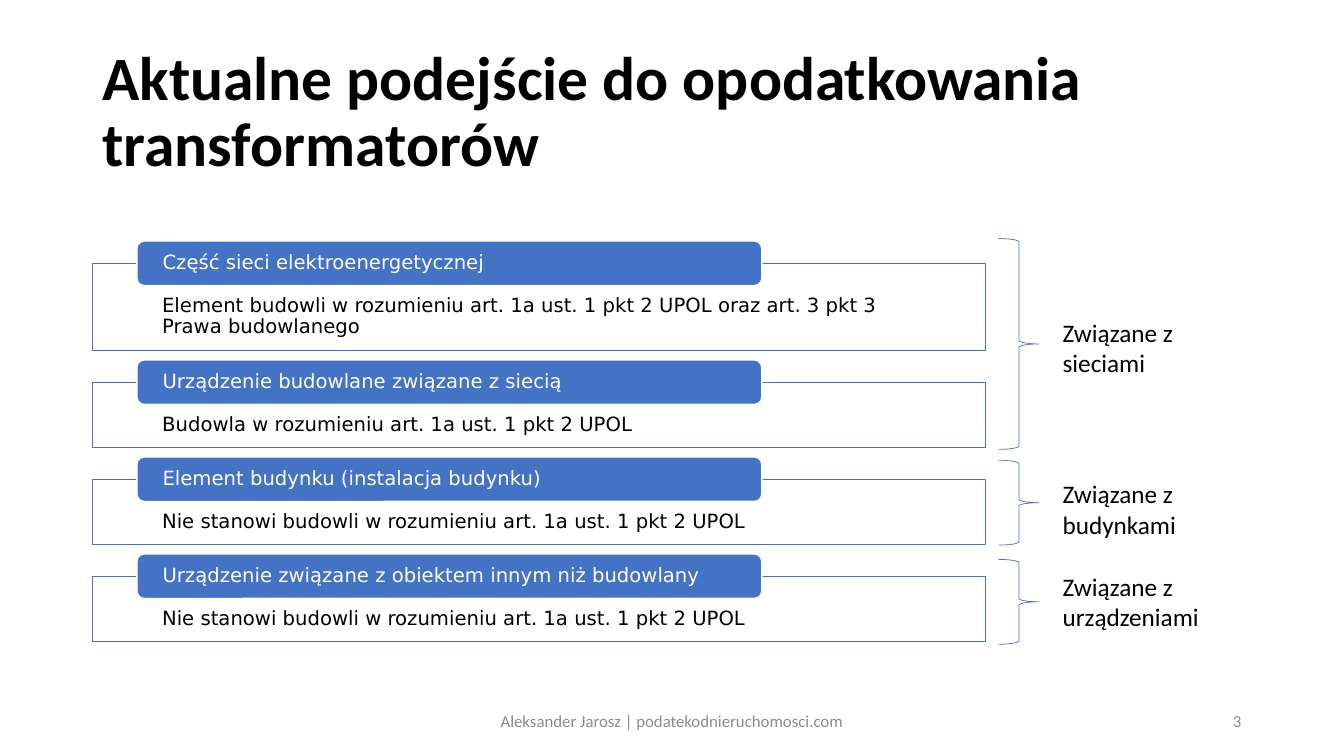
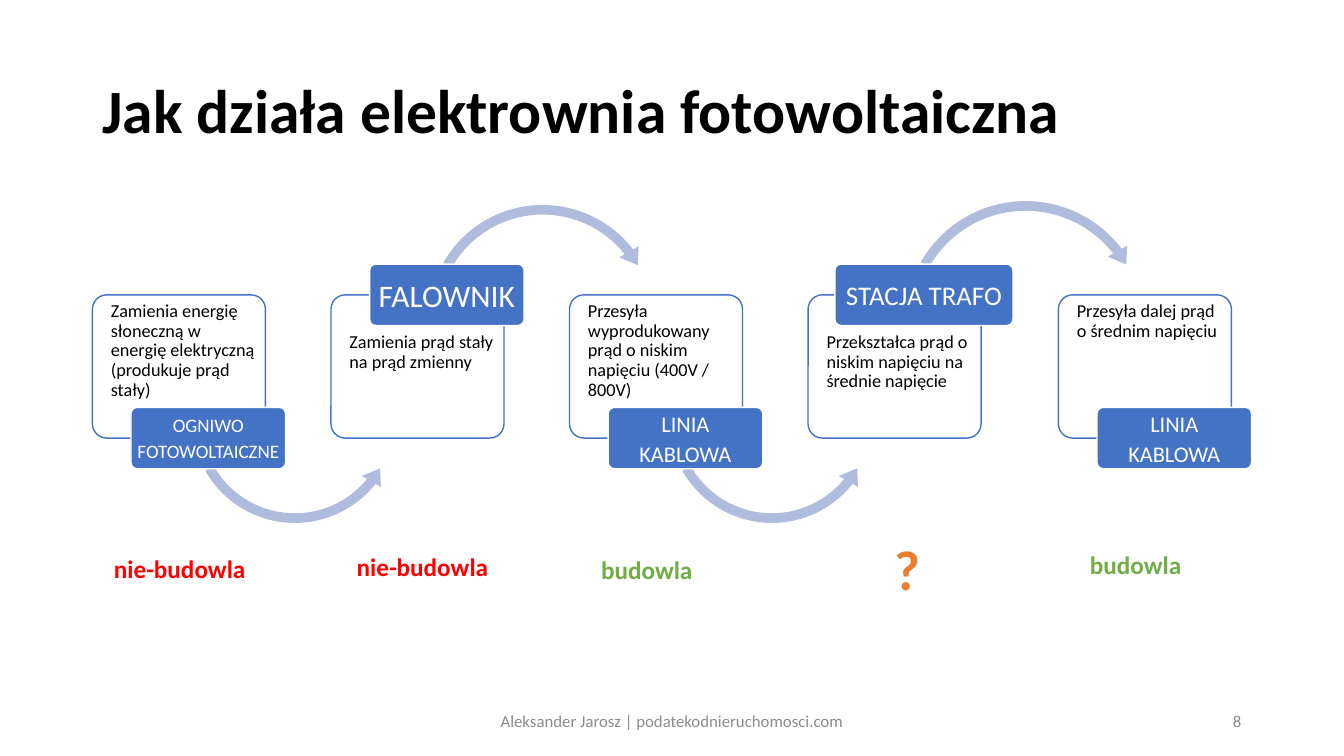
from lxml import etree
from pptx import Presentation
from pptx.dml.color import RGBColor
from pptx.enum.shapes import MSO_SHAPE as Preset
from pptx.enum.text import MSO_ANCHOR as Anchor, PP_ALIGN as Align
from pptx.oxml.ns import qn
from pptx.util import Inches, Pt

COLOURS = {
    "ink": "000000",
    "paper": "FFFFFF",
    "blue": "4472C4",
    "arrow": "B0BCDE",
    "footer": "8C8C8C",
    "red": "FF0000",
    "green": "70AD47",
    "orange": "ED7D31",
}
COLUMNS, ROWS = 160, 90
WIDTH, HEIGHT = Inches(13.33), Inches(7.5)
MARGIN, CONTENT = 11, 138
FOOTER = "Aleksander Jarosz | podatekodnieruchomosci.com"


class Deck:
    """Holds the style and the current slide; lengths are grid columns and rows."""

    def __init__(self):
        self.show = Presentation()
        self.show.slide_width, self.show.slide_height = WIDTH, HEIGHT
        self.slide = None

    def col(self, count):
        return round(WIDTH * count / COLUMNS)

    def row(self, count):
        return round(HEIGHT * count / ROWS)

    def area(self, x, y, w, h):
        return self.col(x), self.row(y), self.col(w), self.row(h)

    def colour(self, name):
        return RGBColor.from_string(COLOURS[name])

    def new_slide(self, title, number):
        self.slide = self.show.slides.add_slide(self.show.slide_layouts[6])
        self.text((MARGIN, 4.8, CONTENT, 17.4), title, 44, bold=True,
                  anchor=Anchor.MIDDLE, spacing=0.9)
        for area, words, align in (
            ((53, 83.4, 54, 4.8), FOOTER, Align.CENTER),
            ((113, 83.4, 36, 4.8), str(number), Align.RIGHT),
        ):
            self.text(area, words, 12, "footer", align=align, anchor=Anchor.MIDDLE)

    def set_text(self, holder, words, size, colour="ink", font="Calibri", bold=False,
                 align=Align.LEFT, anchor=Anchor.TOP, spacing=1.0,
                 insets=(1.2, 0.6, 1.2, 0.6), small_caps=False):
        """Fill a shape with text; insets are left, top, right, bottom."""
        frame = holder.text_frame
        frame.word_wrap = True
        frame.vertical_anchor = anchor
        left, top, right, bottom = insets
        frame.margin_left, frame.margin_right = self.col(left), self.col(right)
        frame.margin_top, frame.margin_bottom = self.row(top), self.row(bottom)
        for index, line in enumerate(words.split("\n")):
            paragraph = frame.add_paragraph() if index else frame.paragraphs[0]
            paragraph.alignment = align
            paragraph.line_spacing = spacing
            run = paragraph.add_run()
            run.text = line
            run.font.size = Pt(size)
            run.font.name = font
            run.font.bold = bold
            run.font.color.rgb = self.colour(colour)
            if small_caps:
                run._r.get_or_add_rPr().set("cap", "small")

    def text(self, area, words, size, colour="ink", **style):
        box = self.slide.shapes.add_textbox(*self.area(*area))
        self.set_text(box, words, size, colour, **style)

    def shape(self, preset, area, fill=None, line=None, weight=1, adjust=(), opacity=None):
        shape = self.slide.shapes.add_shape(preset, *self.area(*area))
        shape.shadow.inherit = False
        for index, value in enumerate(adjust):
            shape.adjustments[index] = value
        if fill:
            shape.fill.solid()
            shape.fill.fore_color.rgb = self.colour(fill)
        else:
            shape.fill.background()
        if opacity:
            tint = shape.element.spPr.find(qn("a:solidFill"))[0]
            etree.SubElement(tint, qn("a:alpha")).set("val", str(opacity * 1000))
        if line:
            shape.line.color.rgb = self.colour(line)
            shape.line.width = Pt(weight)
        else:
            shape.line.fill.background()
        return shape

    def panel(self, preset, area, adjust=()):
        return self.shape(preset, area, "paper", "blue", adjust=adjust, opacity=90)

    def label(self, area, words, size, adjust=(), **style):
        tab = self.shape(Preset.ROUNDED_RECTANGLE, area, "blue", "paper", adjust=adjust)
        self.set_text(tab, words, size, "paper", anchor=Anchor.MIDDLE, spacing=0.9, **style)

    def brace(self, top, height):
        self.shape(Preset.RIGHT_BRACE, (118.9, top, 4.8, height), line="blue", weight=0.5)

    def arc_arrow(self, centre_x, centre_y, size, over):
        """Draw an arc from left to right, over or under its centre."""
        tip, start, full_turn = 17.75, 90.25, 216  # 0.6 per degree
        head = 144 / size
        if over:
            preset = Preset.CIRCULAR_ARROW
            angles = (head, full_turn - tip - head, full_turn - start)
        else:
            preset = Preset.LEFT_CIRCULAR_ARROW
            angles = (head, tip + head, start)
        area = (centre_x - size / 2, centre_y - size / 2, size, size)
        self.shape(preset, area, "arrow", adjust=(1.15 / size, *angles, 1.32 / size))


def transformer_slide(deck):
    deck.new_slide("Aktualne podejście do opodatkowania transformatorów", 3)
    no_structure = "Nie stanowi budowli w rozumieniu art. 1a ust. 1 pkt 2 UPOL"
    approaches = (
        ("Część sieci elektroenergetycznej",
         "Element budowli w rozumieniu art. 1a ust. 1 pkt 2 UPOL oraz art. 3 pkt 3 "
         "Prawa budowlanego", 10.4),
        ("Urządzenie budowlane związane z siecią",
         "Budowla w rozumieniu art. 1a ust. 1 pkt 2 UPOL", 7.8),
        ("Element budynku (instalacja budynku)", no_structure, 7.8),
        ("Urządzenie związane z obiektem innym niż budowlany", no_structure, 7.8),
    )
    tab_height, gap, top = 5.3, 1.1, 28.7
    for heading, ruling, height in approaches:
        panel_top = top + tab_height / 2
        panel = deck.panel(Preset.RECTANGLE, (MARGIN, panel_top, 106.3, height))
        deck.set_text(panel, ruling, 14, font="DejaVu Sans", spacing=0.9,
                      insets=(8.3, 3.8, 8.3, 1.3))
        deck.label((16.3, top, 74.4, tab_height), heading, 14, font="DejaVu Sans",
                   insets=(2.8, 0, 2.8, 0))
        top = panel_top + height + gap

    for group, note_top, brace_top, brace_height in (
        ("Związane z sieciami", 37.2, 28.4, 25.1),
        ("Związane z budynkami", 56.4, 54.8, 10.1),
        ("Związane z urządzeniami", 67.4, 66.6, 10.1),
    ):
        deck.text((125.3, note_top, 25.4, 8.5), group, 18)
        deck.brace(brace_top, brace_height)


def power_plant_slide(deck):
    deck.new_slide("Jak działa elektrownia fotowoltaiczna", 8)
    # device, its size and width, role, arrow (offset, centre, size),
    # verdict, its colour, size, offset and centre
    steps = (
        ("ogniwo\nfotowoltaiczne", 17, 18.4,
         "Zamienia energię słoneczną w energię elektryczną (produkuje prąd stały)",
         (24.1, 50, 26), ("nie-budowla", "red", 18, 10.4, 67.7)),
        ("falownik", 28, 18.4, "Zamienia prąd stały na prąd zmienny",
         (25.2, 38, 28.7), ("nie-budowla", "red", 18, 10.9, 67.4)),
        ("linia kablowa", 20, 18.4,
         "Przesyła wyprodukowany prąd o niskim napięciu (400V / 800V)",
         (24.1, 50, 26), ("budowla", "green", 18, 9.2, 67.8)),
        ("stacja trafo", 24, 21.2,
         "Przekształca prąd o niskim napięciu na średnie napięcie",
         (25.9, 38.3, 30.2), ("?", "orange", 40, 11.8, 67.6)),
        ("linia kablowa", 20, 18.4, "Przesyła dalej prąd o średnim napięciu",
         None, ("budowla", "green", 18, 9.2, 67.2)),
    )
    panel_top, panel_height, label_height = 35.1, 17.05, 7.3
    label_centre, gap, corner = 13.8, 5.4, (0.1,)
    verdict_width, verdict_height = 18.4, 9.2
    left = MARGIN
    for index, (device, size, width, role, arrow, verdict) in enumerate(steps):
        label_on_top = index % 2 == 1
        panel = deck.panel(Preset.ROUNDED_RECTANGLE,
                           (left, panel_top, 20.6, panel_height), corner)
        deck.set_text(panel, role, 13, spacing=0.9,
                      insets=(1.7, 4 if label_on_top else 0.3, 0.2, 0.3))
        if arrow:
            offset, centre, arrow_size = arrow
            deck.arc_arrow(left + offset, centre, arrow_size, over=label_on_top)
        edge = panel_top if label_on_top else panel_top + panel_height
        label_left = left + label_centre - width / 2
        deck.label((label_left, edge - label_height / 2, width, label_height),
                   device, size, corner, align=Align.CENTER,
                   insets=(0.4, 0.2, 0.4, 0.2), small_caps=True)
        words, colour, verdict_size, offset, centre = verdict
        deck.text((left + offset - verdict_width / 2, centre - verdict_height / 2,
                   verdict_width, verdict_height), words, verdict_size, colour,
                  bold=True, align=Align.CENTER, anchor=Anchor.MIDDLE)
        left = label_left + width + gap


def main():
    deck = Deck()
    transformer_slide(deck)
    power_plant_slide(deck)
    deck.show.save("out.pptx")


if __name__ == "__main__":
    main()
